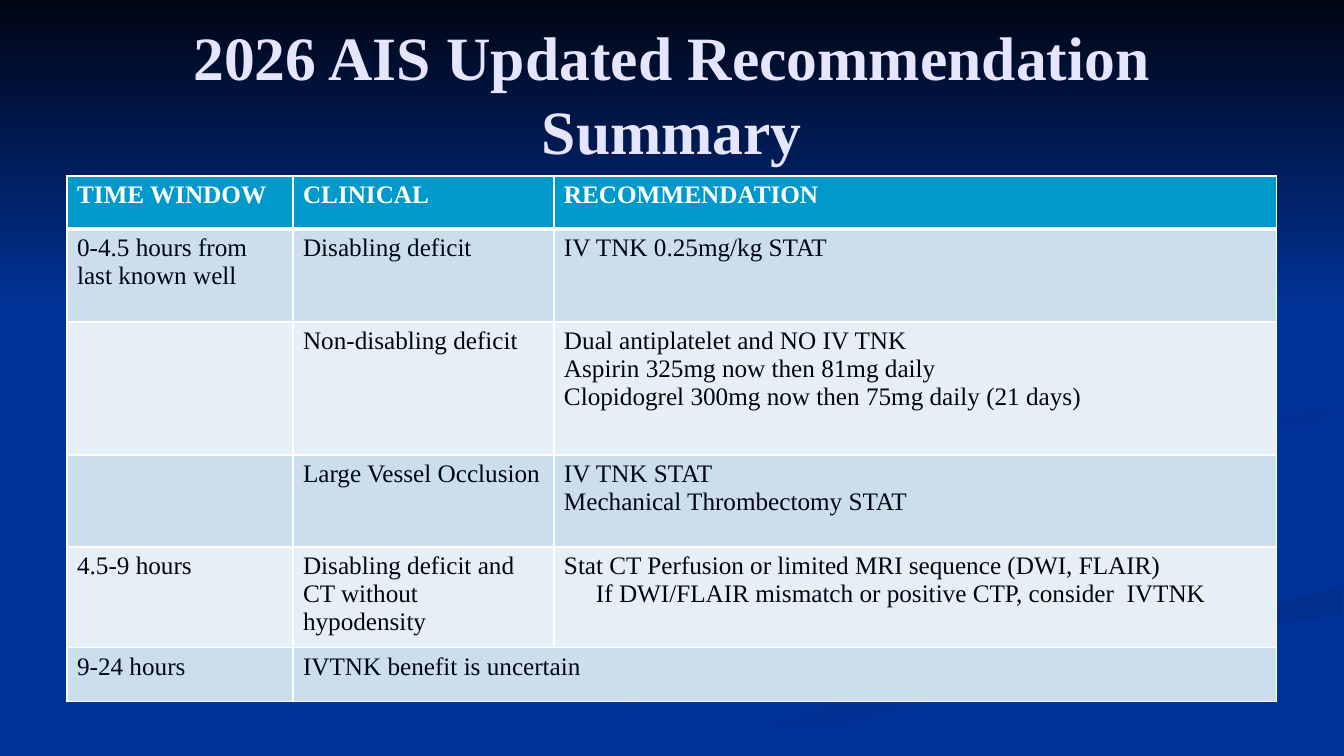
import dataclasses

import pptx
import pptx.dml.color
import pptx.enum.shapes
import pptx.enum.text
import pptx.oxml
import pptx.oxml.ns
import pptx.util


@dataclasses.dataclass(frozen=True)
class Theme:
    """Colours, font and type sizes of the slide."""
    font: str = "Times New Roman"
    title_size: int = 44
    table_size: int = 18
    background: str = "003399"
    night: str = "000514"
    title: str = "E5E5FF"
    header: str = "0099CC"
    white: str = "FFFFFF"
    bands: tuple = ("CCDEEC", "E7EFF6")
    ribbon: str = "003193"
    wave: str = "002F8C"
    wisp: str = "003091"


THEME = Theme()
WIDTH, HEIGHT = 1344, 756
SCALE = 12192000 / WIDTH
COLUMNS = (226, 261, 723)
ROWS = (53, 93, 133, 92, 94, 54)
INDENT = 32

RIBBON = (
    (1050, 557), (1001, 542), (917, 523), (842, 506), (798, 489), (774, 473), (773, 463),
    (766, 474), (788, 491), (848, 509), (936, 529), (1011, 547), (1049, 560), (1056, 571),
    (1040, 588), (993, 603), (920, 618), (829, 634), (725, 654), (616, 679), (506, 713),
    (403, 755), (486, 755), (580, 720), (670, 692), (758, 670), (874, 645), (970, 628),
    (1033, 614), (1062, 602), (1076, 586), (1064, 565),
)
WAVE = (
    (699, 753), (676, 755), (768, 755), (789, 746), (847, 725), (933, 698), (1011, 677),
    (1104, 656), (1214, 635), (1342, 614), (1342, 586), (1294, 599), (1214, 615),
    (1118, 634), (1027, 652), (935, 674), (847, 699), (765, 725),
)
WISP = (
    (1050, 464), (1051, 473), (1072, 487), (1110, 500), (1087, 488), (1082, 476),
    (1097, 463), (1133, 452), (1179, 443), (1258, 432), (1342, 423), (1342, 405),
    (1299, 412), (1208, 421), (1121, 430), (1074, 440), (1055, 451),
)

CONTENT = (
    (("TIME WINDOW",), ("CLINICAL",), ("RECOMMENDATION",)),
    (("0-4.5 hours from last known well",), ("Disabling deficit",), ("IV TNK 0.25mg/kg STAT",)),
    ((), ("Non-disabling deficit",), (
        "Dual antiplatelet and NO IV TNK",
        "Aspirin 325mg now then 81mg daily",
        "Clopidogrel 300mg now then 75mg daily (21 days)")),
    ((), ("Large Vessel Occlusion",), ("IV TNK STAT", "Mechanical Thrombectomy STAT")),
    (("4.5-9 hours",), ("Disabling deficit and", "CT without hypodensity"), (
        "Stat CT Perfusion or limited MRI sequence (DWI, FLAIR)",
        "If DWI/FLAIR mismatch or positive CTP, consider  IVTNK")),
    (("9-24 hours",), ("IVTNK benefit is uncertain",), ()),
)
INDENTED = {CONTENT[4][2][1]}


def px(length):
    """Turn a length in px into EMU."""
    return pptx.util.Emu(round(length * SCALE))


def rgb(value):
    """Return the colour of a hex value."""
    return pptx.dml.color.RGBColor.from_string(value)


def add_run(paragraph, text, size, color, bold):
    """Add one formatted run to a paragraph."""
    run = paragraph.add_run()
    run.text = text
    run.font.name = THEME.font
    run.font.size = pptx.util.Pt(size)
    run.font.bold = bold
    run.font.color.rgb = rgb(color)


def paint_gradient(shape, colors, angle):
    """Fill a shape with a two-colour gradient at a clockwise angle."""
    shape.shadow.inherit = False
    shape.line.fill.background()
    shape.fill.gradient()
    shape.fill.gradient_angle = (360 - angle) % 360
    for stop, color in zip(shape.fill.gradient_stops, colors):
        stop.color.rgb = rgb(color)


def add_backdrop(slide, left, top, width, height):
    """Draw the background, its swooshes and the dark upper band."""
    slide.background.fill.solid()
    slide.background.fill.fore_color.rgb = rgb(THEME.background)
    swooshes = (
        (RIBBON, (THEME.background, THEME.ribbon), 0),
        (WAVE, (THEME.wave, THEME.background), 90),
        (WISP, (THEME.wisp, THEME.background), 45),
    )
    for points, colors, angle in swooshes:
        outline = [(px(left + x), px(top + y)) for x, y in points]
        builder = slide.shapes.build_freeform(*outline[0], scale=1.0)
        builder.add_line_segments(outline[1:], close=True)
        paint_gradient(builder.convert_to_shape(), colors, angle)
    band = slide.shapes.add_shape(
        pptx.enum.shapes.MSO_SHAPE.RECTANGLE, px(left), px(top), px(width), px(height))
    paint_gradient(band, (THEME.night, THEME.background), 90)


def add_title(slide, left, top, width, height):
    """Place the centred title in its box."""
    frame = slide.shapes.add_textbox(px(left), px(top), px(width), px(height)).text_frame
    frame.word_wrap = True
    frame.vertical_anchor = pptx.enum.text.MSO_ANCHOR.MIDDLE
    paragraph = frame.paragraphs[0]
    paragraph.alignment = pptx.enum.text.PP_ALIGN.CENTER
    add_run(paragraph, "2026 AIS Updated Recommendation Summary",
            THEME.title_size, THEME.title, True)


def add_borders(cell, row):
    """Draw white cell borders, thicker under the header row."""
    properties = cell._tc.get_or_add_tcPr()
    points = {"L": 1, "R": 1, "T": 3 if row == 1 else 1, "B": 3 if row == 0 else 1}
    for side, weight in points.items():
        properties.append(pptx.oxml.parse_xml(
            f'<a:ln{side} {pptx.oxml.ns.nsdecls("a")} w="{pptx.util.Pt(weight)}">'
            f'<a:solidFill><a:srgbClr val="{THEME.white}"/></a:solidFill></a:ln{side}>'))


def fill_cell(cell, row, lines):
    """Style one table cell and write its lines."""
    header = row == 0
    add_borders(cell, row)
    cell.fill.solid()
    cell.fill.fore_color.rgb = rgb(THEME.header if header else THEME.bands[(row - 1) % 2])
    for index, line in enumerate(lines):
        frame = cell.text_frame
        paragraph = frame.add_paragraph() if index else frame.paragraphs[0]
        if line in INDENTED:
            paragraph._p.get_or_add_pPr().set("marL", str(px(INDENT)))
        add_run(paragraph, line, THEME.table_size,
                THEME.white if header else THEME.night, header)


def add_recommendations(slide, left, top):
    """Build the table of recommendations from its top left corner."""
    table = slide.shapes.add_table(
        len(ROWS), len(COLUMNS), px(left), px(top), px(sum(COLUMNS)), px(sum(ROWS))).table
    for column, width in zip(table.columns, COLUMNS):
        column.width = px(width)
    for row, height in zip(table.rows, ROWS):
        row.height = px(height)
    for row, cells in enumerate(CONTENT):
        for column, lines in enumerate(cells):
            fill_cell(table.cell(row, column), row, lines)
    last = len(ROWS) - 1
    table.cell(last, 1).merge(table.cell(last, 2))


def main():
    """Build and save the presentation."""
    presentation = pptx.Presentation()
    presentation.slide_width = px(WIDTH)
    presentation.slide_height = px(HEIGHT)
    slide = presentation.slides.add_slide(presentation.slide_layouts[6])
    add_backdrop(slide, 0, 0, WIDTH, 310)
    add_title(slide, 67, 30, 1210, 126)
    add_recommendations(slide, 67, 176)
    presentation.save("out.pptx")


if __name__ == "__main__":
    main()
